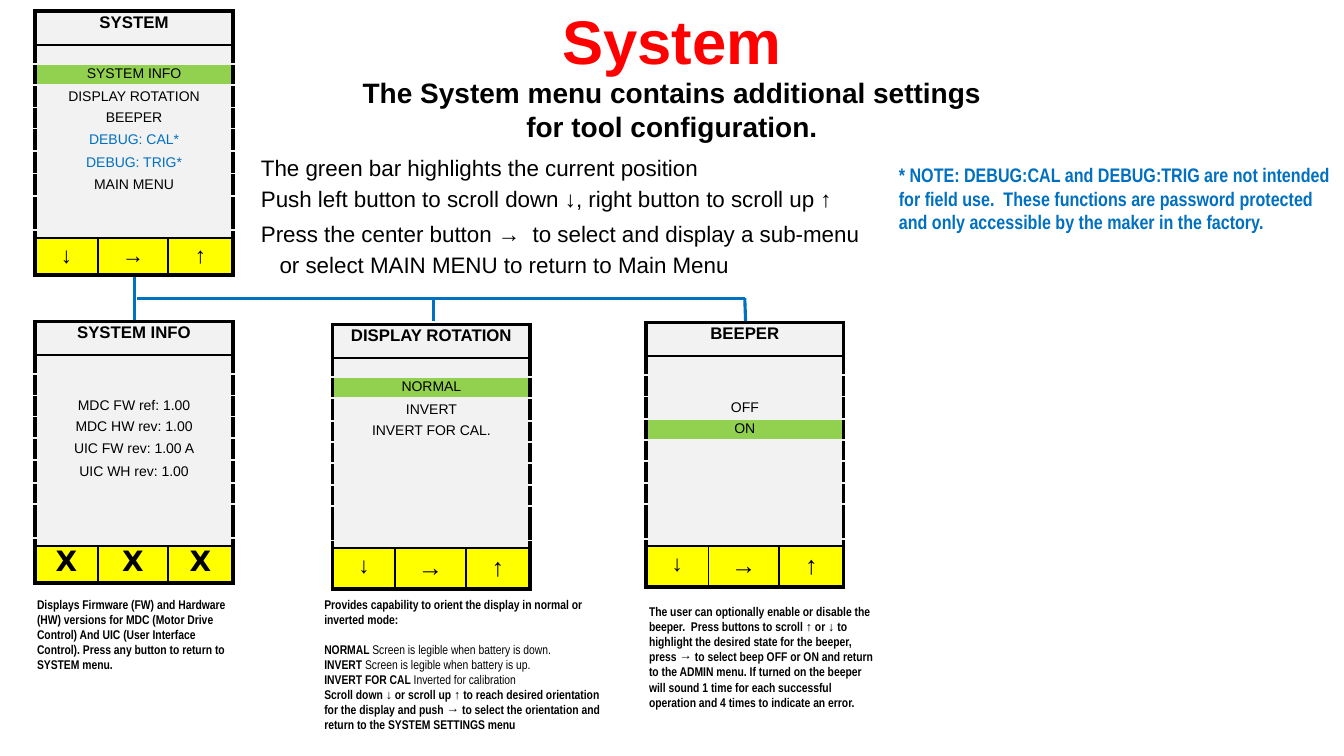
from dataclasses import dataclass

from lxml.etree import SubElement
from pptx import Presentation
from pptx.dml.color import RGBColor
from pptx.enum.shapes import MSO_CONNECTOR
from pptx.enum.text import PP_ALIGN
from pptx.oxml import parse_xml
from pptx.oxml.ns import nsdecls, qn
from pptx.util import Pt

BLACK = RGBColor(0x00, 0x00, 0x00)
RED = RGBColor(0xFF, 0x00, 0x00)
BLUE = RGBColor(0x00, 0x70, 0xC0)
GRAY = RGBColor(0xF2, 0xF2, 0xF2)
GREEN = RGBColor(0x92, 0xD0, 0x50)
YELLOW = RGBColor(0xFF, 0xFF, 0x00)

COLUMN_WIDTHS = (44.6, 50.4, 46.1)
ROW_HEIGHTS = (24, 13.7, 15.1, 15.1, 15.1, 15.1, 15.8, 15.1, 24.5, 5.5, 26.6)
HEADER_ROW, LAST_BODY_ROW, BUTTON_ROW = 0, 9, 10
ARROWS = (("↓", 16), ("→", 18), ("↑", 18))
SMALL_ARROWS = (("↓", 16), ("→", 16), ("↑", 16))
CROSSES = (("X", 20),) * 3


@dataclass
class Entry:
    """One line of a device menu."""

    text: str
    spacing: float = 1.0
    color: RGBColor = BLACK
    fill: RGBColor = GRAY


def style(font, size, color=BLACK, bold=False, name="Arial"):
    """Set the look of a font."""
    font.name, font.size, font.bold = name, Pt(size), bold
    font.color.rgb = color


def add_text(slide, left, top, width, height, paragraphs, align=PP_ALIGN.LEFT, **look):
    """Add a wrapped text box with one look and return its paragraphs."""
    box = slide.shapes.add_textbox(Pt(left), Pt(top), Pt(width), Pt(height))
    frame = box.text_frame
    frame.word_wrap = True
    frame.text = "\n".join(paragraphs)
    for paragraph in frame.paragraphs:
        paragraph.alignment = align
        style(paragraph.font, **look)
    return frame.paragraphs


def add_line(slide, start, end):
    """Add a blue connecting line."""
    line = slide.shapes.add_connector(
        MSO_CONNECTOR.STRAIGHT, *(Pt(value) for value in start + end))
    line.line.color.rgb = BLUE
    line.line.width = Pt(2.25)
    SubElement(line._element.spPr, qn("a:effectLst"))


def set_borders(cell, left, right, top, bottom):
    """Give a cell four solid borders, each a colour and a width."""
    properties = cell._tc.get_or_add_tcPr()
    sides = zip("LRTB", (left, right, top, bottom))
    for index, (side, (color, width)) in enumerate(sides):
        properties.insert(index, parse_xml(
            f'<a:ln{side} {nsdecls("a")} w="{Pt(width)}"><a:solidFill>'
            f'<a:srgbClr val="{color}"/></a:solidFill></a:ln{side}>'))


def fill_cell(cell, fill, text="", inset=0, side_inset=7.2, spacing=1.0, **look):
    """Fill a cell and write its centred text."""
    cell.fill.solid()
    cell.fill.fore_color.rgb = fill
    cell.margin_left = cell.margin_right = Pt(side_inset)
    cell.margin_top = cell.margin_bottom = Pt(inset)
    paragraph = cell.text_frame.paragraphs[0]
    if not text:
        paragraph._p.get_or_add_endParaRPr().set("sz", "100")
        return
    paragraph.text = text
    paragraph.alignment = PP_ALIGN.CENTER
    if spacing != 1.0:
        paragraph.line_spacing = spacing
    style(paragraph.font, **look)


def add_screen(slide, left, top, title, first_row, entries, buttons):
    """Add a device display with a title, menu entries and three buttons."""
    table = slide.shapes.add_table(
        len(ROW_HEIGHTS), len(COLUMN_WIDTHS), Pt(left), Pt(top),
        Pt(sum(COLUMN_WIDTHS)), Pt(sum(ROW_HEIGHTS))).table
    table.first_row = table.horz_banding = False
    for column, width in zip(table.columns, COLUMN_WIDTHS):
        column.width = Pt(width)
    menu = dict(enumerate(entries, first_row))
    thick, thin, hidden = (BLACK, 3), (BLACK, 1.5), (GRAY, 1.5)

    for index, height in enumerate(ROW_HEIGHTS):
        table.rows[index].height = Pt(height)
        cells = [table.cell(index, column) for column in range(len(COLUMN_WIDTHS))]
        if index == BUTTON_ROW:
            for column, (cell, (symbol, size)) in enumerate(zip(cells, buttons)):
                cross = symbol == "X"
                fill_cell(cell, YELLOW, symbol, 0 if cross else 3.6, size=size,
                          bold=True, name="DejaVu Sans" if cross else "Arial")
                set_borders(cell, thin if column else thick,
                            thick if column == 2 else thin, thin, thick)
            continue
        above = {HEADER_ROW: thick, HEADER_ROW + 1: thin}.get(index, hidden)
        below = thin if index in (HEADER_ROW, LAST_BODY_ROW) else hidden
        entry = menu.get(index, Entry(""))
        for cell in cells:
            fill_cell(cell, entry.fill)
            set_borders(cell, thick, thick, above, below)
        cells[0].merge(cells[-1])
        if index == HEADER_ROW:
            fill_cell(cells[0], GRAY, title, 1.44, 1, size=12, bold=True)
        elif entry.text:
            fill_cell(cells[0], entry.fill, entry.text, 1.44, spacing=entry.spacing,
                      size=10, color=entry.color)


def add_caption(slide, left, top, width, height, *paragraphs):
    """Add a bold narrow caption below a display."""
    return add_text(slide, left, top, width, height, paragraphs,
                    size=9, bold=True, name="Arial Narrow")


def add_rotation_caption(slide):
    """Add the display rotation caption with its list of modes."""
    modes = (("NORMAL ", "Screen is legible when battery is down."),
             ("INVERT ", "Screen is legible when battery is up."),
             ("INVERT FOR CAL ", "Inverted for calibration"))
    paragraphs = add_caption(
        slide, 224.6, 422.6, 216, 105,
        "Provides capability to orient the display in normal or inverted mode:",
        *(mode for mode, _ in modes),
        "Scroll down ↓ or scroll up ↑ to reach desired orientation for the display and "
        "push → to select the orientation and return to the SYSTEM SETTINGS menu")
    for paragraph, (_, meaning) in zip(paragraphs[1:], modes):
        run = paragraph.add_run()
        run.text = meaning
        run.font.bold = False
    paragraphs[1].space_before = Pt(10.5)


def add_instructions(slide):
    """Add the explanation of the buttons."""
    paragraphs = add_text(slide, 179.3, 106.6, 486, 97, (
        "The green bar highlights the current position",
        "Push left button to scroll down ↓, right button to scroll up ↑",
        "Press the center button →  to select and display a sub-menu",
        "or select MAIN MENU to return to Main Menu"), size=16)
    for paragraph, space in zip(paragraphs, (3, 6, 3, 3)):
        paragraph.space_after = Pt(space)
    paragraphs[-1]._p.get_or_add_pPr().set("marL", str(Pt(13.3)))


def main():
    """Build the system menu slide."""
    presentation = Presentation()
    presentation.slide_width, presentation.slide_height = Pt(960), Pt(540)
    slide = presentation.slides.add_slide(presentation.slide_layouts[6])

    add_line(slide, (98, 213), (532, 213))
    add_line(slide, (532.8, 234.7), (532, 213))
    add_line(slide, (96, 229), (96, 196.6))
    add_line(slide, (309.6, 229), (309.6, 213.8))

    add_text(slide, 0, -1.4, 960, 60.5, ["System"], PP_ALIGN.CENTER,
             size=44, color=RED, bold=True)
    add_text(slide, 0, 50.4, 960, 55.4,
             ["The System menu contains additional settings", "for tool configuration."],
             PP_ALIGN.CENTER, size=20, bold=True)
    add_instructions(slide)
    add_text(slide, 635, 113, 325.4, 58.3, [
        "* NOTE: DEBUG:CAL and DEBUG:TRIG are not intended for field use.  These functions "
        "are password protected and only accessible by the maker in the factory."],
        size=14, color=BLUE, bold=True, name="Arial Narrow")

    add_screen(slide, 25.2, 7.9, "SYSTEM", 2, (
        Entry("SYSTEM INFO", fill=GREEN), Entry("DISPLAY ROTATION", 1.1), Entry("BEEPER"),
        Entry("DEBUG: CAL*", 1.1, BLUE), Entry("DEBUG: TRIG*", 1.1, BLUE),
        Entry("MAIN MENU", 1.1)), SMALL_ARROWS)
    add_screen(slide, 25.2, 229.7, "SYSTEM INFO", 3, (
        Entry("MDC FW ref: 1.00"), Entry("MDC HW rev: 1.00"),
        Entry("UIC FW rev: 1.00 A", 1.1), Entry("UIC WH rev: 1.00", 1.1)), CROSSES)
    add_screen(slide, 237.6, 231.8, "DISPLAY ROTATION", 2, (
        Entry("NORMAL", fill=GREEN), Entry("INVERT", 1.1), Entry("INVERT FOR CAL.")), ARROWS)
    add_screen(slide, 461.5, 230.4, "BEEPER", 3, (
        Entry("OFF", 1.1), Entry("ON", fill=GREEN)), ARROWS)

    add_caption(slide, 19.4, 422.6, 160, 62,
                "Displays Firmware (FW) and Hardware (HW) versions for MDC (Motor Drive Control) "
                "And UIC (User Interface Control). Press any button to return to SYSTEM menu.")
    add_rotation_caption(slide)
    add_caption(slide, 456.5, 427.7, 179.3, 83.5,
                "The user can optionally enable or disable the beeper.  Press buttons to scroll "
                "↑ or ↓ to highlight the desired state for the beeper, press → to select beep OFF "
                "or ON and return to the ADMIN menu. If turned on the beeper will sound 1 time "
                "for each successful operation and 4 times to indicate an error.")
    presentation.save("out.pptx")


if __name__ == "__main__":
    main()
